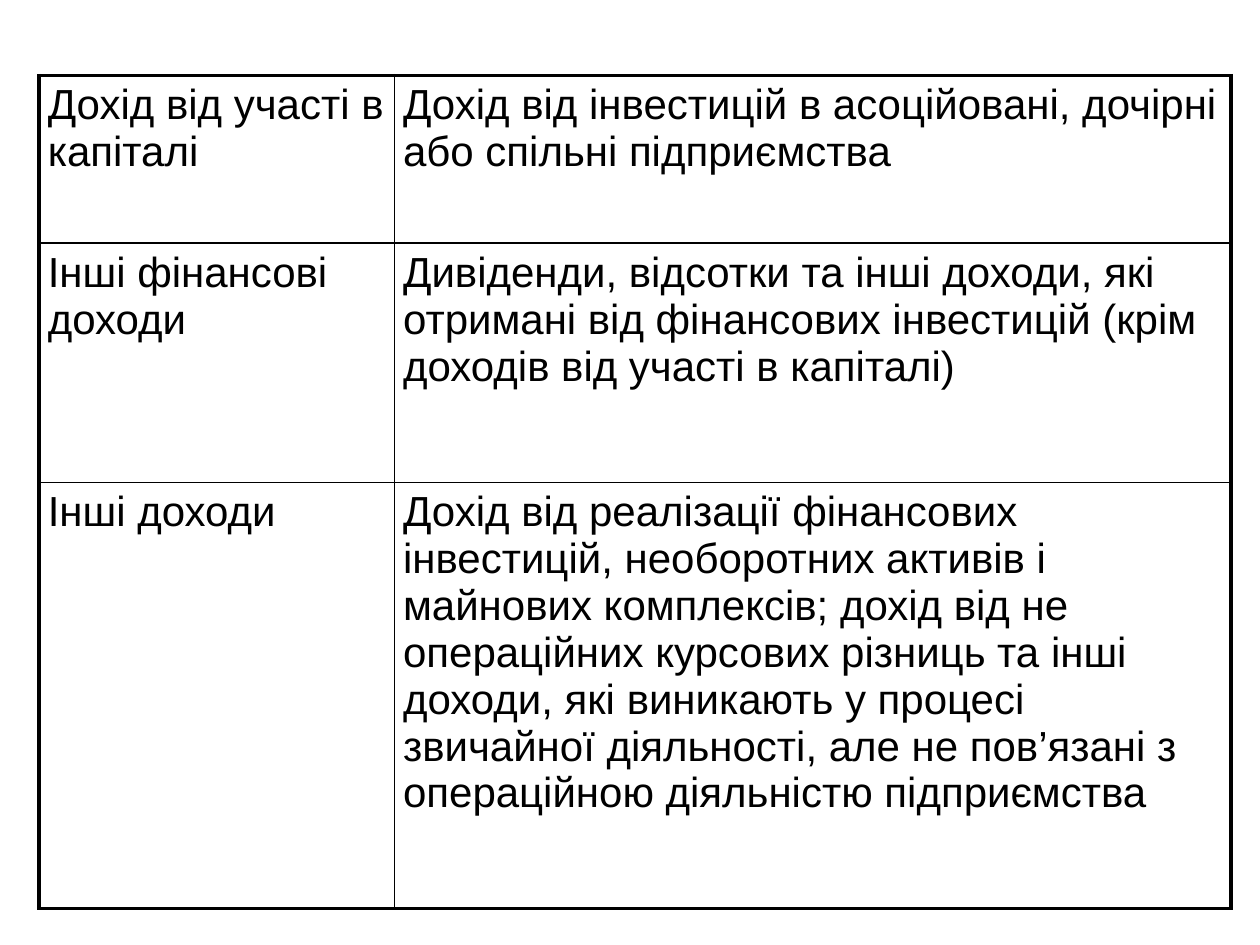
from lxml.etree import SubElement
from pptx import Presentation
from pptx.dml.color import RGBColor
from pptx.oxml.ns import qn
from pptx.util import Inches, Pt

INK = "000000"
OUTER, INNER = 2.25, 1
INSETS = {"margin_left": 0.07, "margin_right": 0.07,
          "margin_top": 0.05, "margin_bottom": 0.05}
FONT = {"name": "Arial", "size": Pt(24), "bold": False}

income_types = [
    ("Дохід від участі в капіталі",
     "Дохід від інвестицій в асоційовані, дочірні або спільні підприємства"),
    ("Інші фінансові доходи",
     "Дивіденди, відсотки та інші доходи, які отримані від фінансових "
     "інвестицій (крім доходів від участі в капіталі)"),
    ("Інші доходи",
     "Дохід від реалізації фінансових інвестицій, необоротних активів і "
     "майнових комплексів; дохід від не операційних курсових різниць та інші "
     "доходи, які виникають у процесі звичайної діяльності, але не пов’язані з "
     "операційною діяльністю підприємства"),
]
column_widths = [2.82, 6.64]
row_heights = [1.33, 1.9, 3.38]


def add_border(cell, side, points):
    line = SubElement(cell._tc.get_or_add_tcPr(), qn(f"a:ln{side}"), w=str(Pt(points)))
    fill = SubElement(line, qn("a:solidFill"))
    SubElement(fill, qn("a:srgbClr"), val=INK)


prs = Presentation()
prs.slide_width, prs.slide_height = Inches(10), Inches(7.5)
slide = prs.slides.add_slide(prs.slide_layouts[6])

income_table = slide.shapes.add_table(
    len(row_heights), len(column_widths), Inches(0.31), Inches(0.6),
    Inches(sum(column_widths)), Inches(sum(row_heights))).table
income_table.first_row = False
income_table.horz_banding = False
for column, width in zip(income_table.columns, column_widths):
    column.width = Inches(width)
for row, height in zip(income_table.rows, row_heights):
    row.height = Inches(height)

last_row, last_column = len(row_heights) - 1, len(column_widths) - 1
for r, wording in enumerate(income_types):
    for c, text in enumerate(wording):
        cell = income_table.cell(r, c)
        for margin, inches in INSETS.items():
            setattr(cell, margin, Inches(inches))
        on_edge = {"L": c == 0, "R": c == last_column,
                   "T": r == 0, "B": r == last_row}
        for side, outer in on_edge.items():
            add_border(cell, side, OUTER if outer else INNER)
        cell.fill.background()

        run = cell.text_frame.paragraphs[0].add_run()
        run.text = text
        for key, value in FONT.items():
            setattr(run.font, key, value)
        run.font.color.rgb = RGBColor.from_string(INK)

prs.save("out.pptx")
